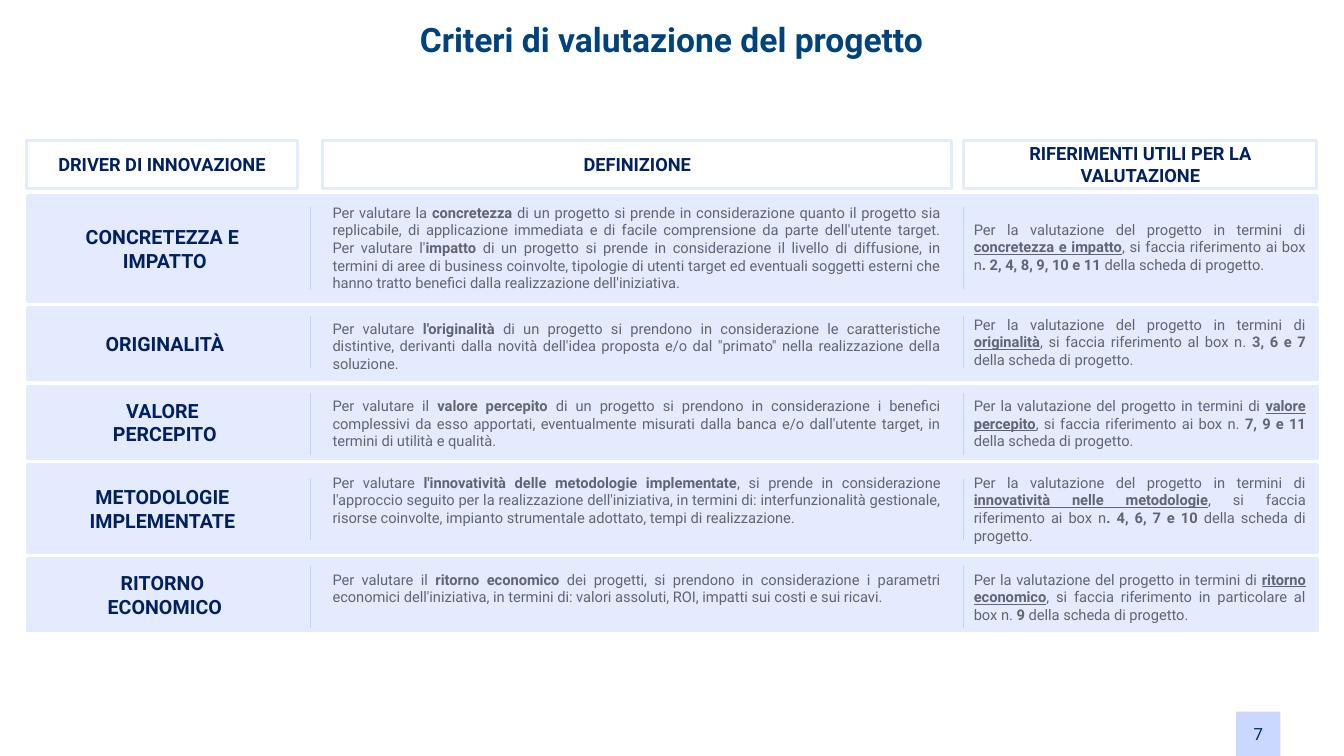
from lxml.etree import SubElement
from pptx import Presentation
from pptx.dml.color import RGBColor
from pptx.enum.shapes import MSO_CONNECTOR, MSO_SHAPE
from pptx.enum.text import MSO_ANCHOR, PP_ALIGN
from pptx.oxml.ns import qn
from pptx.util import Inches, Pt

NAVY, TITLE, GREY = "002060", "00427C", "5D6671"
PALE, RULE, WHITE = "E5EBFF", "C4D2FB", "FFFFFF"
LEFT, MID, RIGHT = 0.26, 3.2, 9.56


def color(code):
    return RGBColor.from_string(code)


class Deck:
    """Holds the style and the current slide."""
    font = "Roboto"

    def __init__(self, wide, high):
        self.prs = Presentation()
        self.prs.slide_width, self.prs.slide_height = Inches(wide), Inches(high)
        self.slide = self.prs.slides.add_slide(self.prs.slide_layouts[6])

    def fill_text(self, shape, paras, size, tint, align, anchor):
        """Each paragraph is a list of (text, marks); marks: b bold, u underline."""
        frame = shape.text_frame
        frame.word_wrap = True
        frame.vertical_anchor = anchor
        for i, runs in enumerate(paras):
            para = frame.add_paragraph() if i else frame.paragraphs[0]
            para.alignment = align
            for text, marks in runs:
                if text == "\n":
                    para.add_line_break()
                    continue
                run = para.add_run()
                run.text = text
                run.font.name = self.font
                run.font.size = Pt(size)
                run.font.color.rgb = color(tint)
                run.font.bold = "b" in marks
                run.font.underline = "u" in marks

    def text(self, x, y, w, h, paras, size, tint, align=PP_ALIGN.JUSTIFY,
             anchor=MSO_ANCHOR.TOP):
        box = self.slide.shapes.add_textbox(*map(Inches, (x, y, w, h)))
        self.fill_text(box, paras, size, tint, align, anchor)

    def box(self, x, y, w, h, fill, edge=None, width=2, paras=(), size=13, tint=NAVY):
        shape = self.slide.shapes.add_shape(
            MSO_SHAPE.RECTANGLE, *map(Inches, (x, y, w, h)))
        shape.shadow.inherit = False
        shape.fill.solid()
        shape.fill.fore_color.rgb = color(fill)
        if edge:
            shape.line.color.rgb = color(edge)
            shape.line.width = Pt(width)
        else:
            shape.line.fill.background()
        self.fill_text(shape, paras, size, tint, PP_ALIGN.CENTER, MSO_ANCHOR.MIDDLE)

    def rule(self, x, y, h):
        line = self.slide.shapes.add_connector(
            MSO_CONNECTOR.STRAIGHT, *map(Inches, (x, y, x, y + h)))
        line.line.color.rgb = color(RULE)
        line.line.width = Pt(0.75)
        SubElement(line._element.spPr, qn("a:effectLst"))


HEADS = [
    (LEFT, 2.69, "DRIVER DI INNOVAZIONE"),
    (MID, 6.24, "DEFINIZIONE"),
    (RIGHT, 3.5, "RIFERIMENTI UTILI PER LA VALUTAZIONE"),
]

# Per row: band height, rule (top, height), label lines,
# definition (top, lines, runs), reference (top, lines, runs after the opening)
OPEN = ("Per la valutazione del progetto in termini di ", "")
CLOSE = ("della scheda di progetto.", "")
ROWS = [
    (1.05, (2.05, 0.82), ["CONCRETEZZA E ", "IMPATTO"],
     (1.97, 5, [
         ("Per valutare la ", ""), ("concretezza", "b"),
         (" di un progetto si prende in considerazione quanto il progetto sia "
          "replicabile, di applicazione immediata e di facile comprensione da "
          "parte dell'utente target.", ""),
         ("\n", ""), ("Per valutare l'", ""), ("impatto", "b"),
         (" di un progetto si prende in considerazione il livello di diffusione, "
          "in termini di aree di business coinvolte, tipologie di utenti target "
          "ed eventuali soggetti esterni che hanno tratto benefici dalla "
          "realizzazione dell'iniziativa.", "")]),
     (2.14, 3, [("concretezza e impatto", "bu"),
                (", si faccia riferimento ai box n", ""),
                (". 2, 4, 8, 9, 10 e 11 ", "b")])),
    (0.72, (3.14, 0.51), ["ORIGINALITÀ"],
     (3.12, 3, [
         ("Per valutare ", ""), ("l'originalità", "b"),
         (" di un progetto si prendono in considerazione le caratteristiche "
          "distintive, derivanti dalla novità dell'idea proposta e/o dal "
          "\"primato\" nella realizzazione della soluzione.", "")]),
     (3.08, 3, [("originalità", "bu"),
                (", si faccia riferimento al box n. ", ""),
                ("3, 6 e 7 ", "b")])),
    (0.72, (3.9, 0.61), ["VALORE ", "PERCEPITO"],
     (3.89, 3, [
         ("Per valutare il ", ""), ("valore percepito ", "b"),
         ("di un progetto si prendono in considerazione i benefici complessivi "
          "da esso apportati, eventualmente misurati dalla banca e/o "
          "dall'utente target, in termini di utilità e qualità.", "")]),
     (3.89, 3, [("valore percepito", "bu"),
                (", si faccia riferimento ai box n. ", ""),
                ("7, 9 e 11 ", "b")])),
    (0.87, (4.75, 0.61), ["METODOLOGIE ", "IMPLEMENTATE "],
     (4.65, 3, [
         ("Per valutare ", ""),
         ("l'innovatività delle metodologie implementate", "b"),
         (", si prende in considerazione l'approccio seguito per la "
          "realizzazione dell'iniziativa, in termini di: interfunzionalità "
          "gestionale, risorse coinvolte, impianto strumentale adottato, tempi "
          "di realizzazione.", "")]),
     (4.65, 4, [("innovatività nelle metodologie", "bu"),
                (", si faccia riferimento ai box n", ""),
                (". 4, 6, 7 e 10 ", "b")])),
    (0.72, (5.62, 0.61), ["RITORNO ", "ECONOMICO"],
     (5.61, 2, [
         ("Per valutare il ", ""), ("ritorno economico ", "b"),
         ("dei progetti, si prendono in considerazione i parametri economici "
          "dell'iniziativa, in termini di: valori assoluti, ROI, impatti sui "
          "costi e sui ricavi.", "")]),
     (5.61, 3, [("ritorno economico", "bu"),
                (", si faccia riferimento in particolare al box n. ", ""),
                ("9 ", "b")])),
]


def main():
    deck = Deck(13.33, 7.5)

    # Page number and title
    deck.box(12.26, 7.06, 0.44, 0.44, "CAD7FF", paras=[[("7", "")]], size=12,
             tint="002C6C")
    deck.text(2.06, 0.23, 9.2, 0.41, [[("Criteri di valutazione del progetto", "b")]],
              24, TITLE, PP_ALIGN.CENTER, MSO_ANCHOR.BOTTOM)

    # Column heads
    for x, w, head in HEADS:
        deck.box(x, 1.39, w, 0.48, WHITE, PALE, 2.25, [[(head, "b")]])

    # Rows, stacked with an equal gap
    top, gap = 1.94, 0.06
    for high, (start, length), label, define, refer in ROWS:
        deck.box(0.27, top, 12.8, high, PALE, PALE)
        tall = 0.11 + 0.23 * len(label)
        deck.box(0.29, top + (high - tall) / 2, 2.69, tall, PALE, PALE,
                 paras=[[(line, "b")] for line in label], size=14)
        y, lines, runs = define
        deck.text(MID, y, 6.23, 0.1 + 0.18 * lines, [runs], 10.5, GREY)
        y, lines, runs = refer
        deck.text(RIGHT, y, 3.49, 0.1 + 0.18 * lines, [[OPEN, *runs, CLOSE]],
                  10.5, GREY)
        for x in (3.08, RIGHT):
            deck.rule(x, start, length)
        top += high + gap

    deck.prs.save("out.pptx")


if __name__ == "__main__":
    main()
